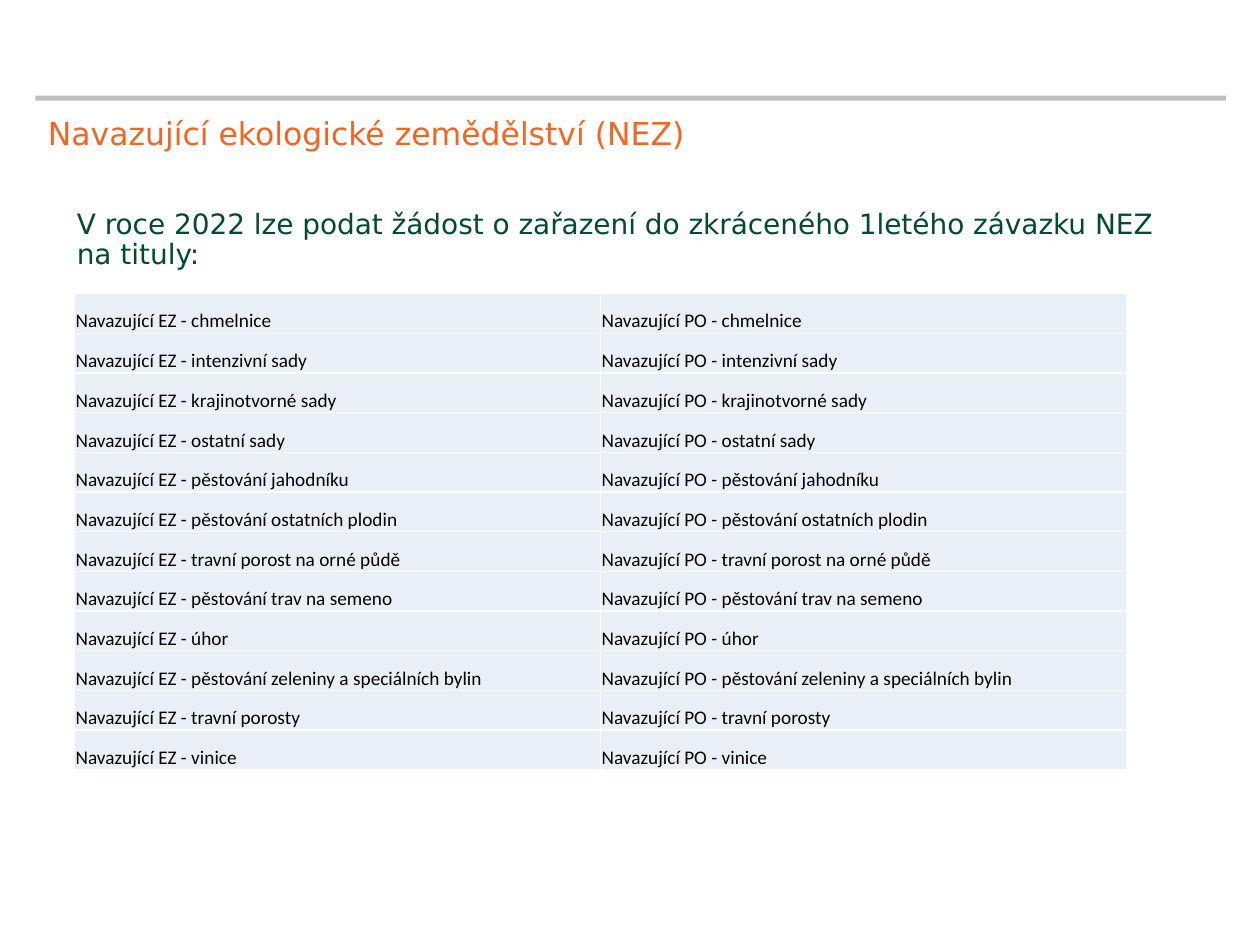
"""Build the slide on the follow-up organic farming scheme."""
from lxml import etree
from pptx import Presentation
from pptx.dml.color import RGBColor
from pptx.enum.shapes import MSO_SHAPE
from pptx.enum.text import MSO_ANCHOR, MSO_AUTO_SIZE, PP_ALIGN
from pptx.oxml import parse_xml
from pptx.oxml.ns import nsdecls, qn
from pptx.util import Inches, Pt


def paint(value):
    return RGBColor.from_string(value)


def write(frame, text, name, size, color, align):
    frame.text = text
    para = frame.paragraphs[0]
    para.alignment = align
    font = para.runs[0].font
    font.name, font.size, font.bold = name, Pt(size), False
    font.color.rgb = paint(color)
    return para


deck = Presentation()
deck.slide_width, deck.slide_height = Inches(10), Inches(7.5)
slide = deck.slides.add_slide(deck.slide_layouts[1])

rule = slide.shapes.add_shape(
    MSO_SHAPE.RECTANGLE, Inches(0.28), Inches(0.76), Inches(9.45), Inches(0.04))
rule.shadow.inherit = False
rule.fill.solid()
rule.fill.fore_color.rgb = paint("BFBFBF")
rule.line.fill.background()

title, body = slide.placeholders
texts = [
    (title, (0.28, 0.8, 9.45, 0.47), 0.12, MSO_ANCHOR.MIDDLE, 18, "F36523",
     "Navazující ekologické zemědělství (NEZ)"),
    (body, (0.51, 1.62, 8.78, 0.71), 0.05, MSO_ANCHOR.TOP, 16, "034A31",
     "V roce 2022 lze podat žádost o zařazení do zkráceného 1letého závazku NEZ na tituly:"),
]
for shape, place, inset, anchor, size, color, text in texts:
    shape.left, shape.top, shape.width, shape.height = map(Inches, place)
    frame = shape.text_frame
    frame.word_wrap = True
    frame.auto_size = MSO_AUTO_SIZE.NONE
    frame.vertical_anchor = anchor
    frame.margin_top = Inches(inset)
    para = write(frame, text, "DejaVu Sans", size, color, PP_ALIGN.LEFT)
    para.line_spacing = 0.9
    para.space_before = Pt(0)

props = body.text_frame.paragraphs[0]._p.get_or_add_pPr()
props.set("marL", "0")
props.set("indent", "0")
etree.SubElement(props, qn("a:buNone"))

crops = [
    "chmelnice", "intenzivní sady", "krajinotvorné sady", "ostatní sady",
    "pěstování jahodníku", "pěstování ostatních plodin",
    "travní porost na orné půdě", "pěstování trav na semeno", "úhor",
    "pěstování zeleniny a speciálních bylin", "travní porosty", "vinice",
]
kinds = ["EZ", "PO"]
table = slide.shapes.add_table(
    len(crops), len(kinds), Inches(0.59), Inches(2.33), Inches(8.35), Inches(3.78)).table
table.first_row = table.horz_banding = False
for row, crop in enumerate(crops):
    for col, kind in enumerate(kinds):
        cell = table.cell(row, col)
        cell.margin_left = cell.margin_right = cell.margin_top = Inches(0.01)
        cell.margin_bottom = 0
        cell.vertical_anchor = MSO_ANCHOR.BOTTOM
        write(cell.text_frame, f"Navazující {kind} - {crop}",
              "Calibri", 11, "000000", PP_ALIGN.JUSTIFY)
        edges = cell._tc.get_or_add_tcPr()
        for side in ("lnL", "lnR", "lnT", "lnB"):
            edges.append(parse_xml(
                f'<a:{side} {nsdecls("a")} w="12700"><a:solidFill>'
                f'<a:srgbClr val="FFFFFF"/></a:solidFill></a:{side}>'))
        cell.fill.solid()
        cell.fill.fore_color.rgb = paint("EAEFF7")

deck.save("out.pptx")
